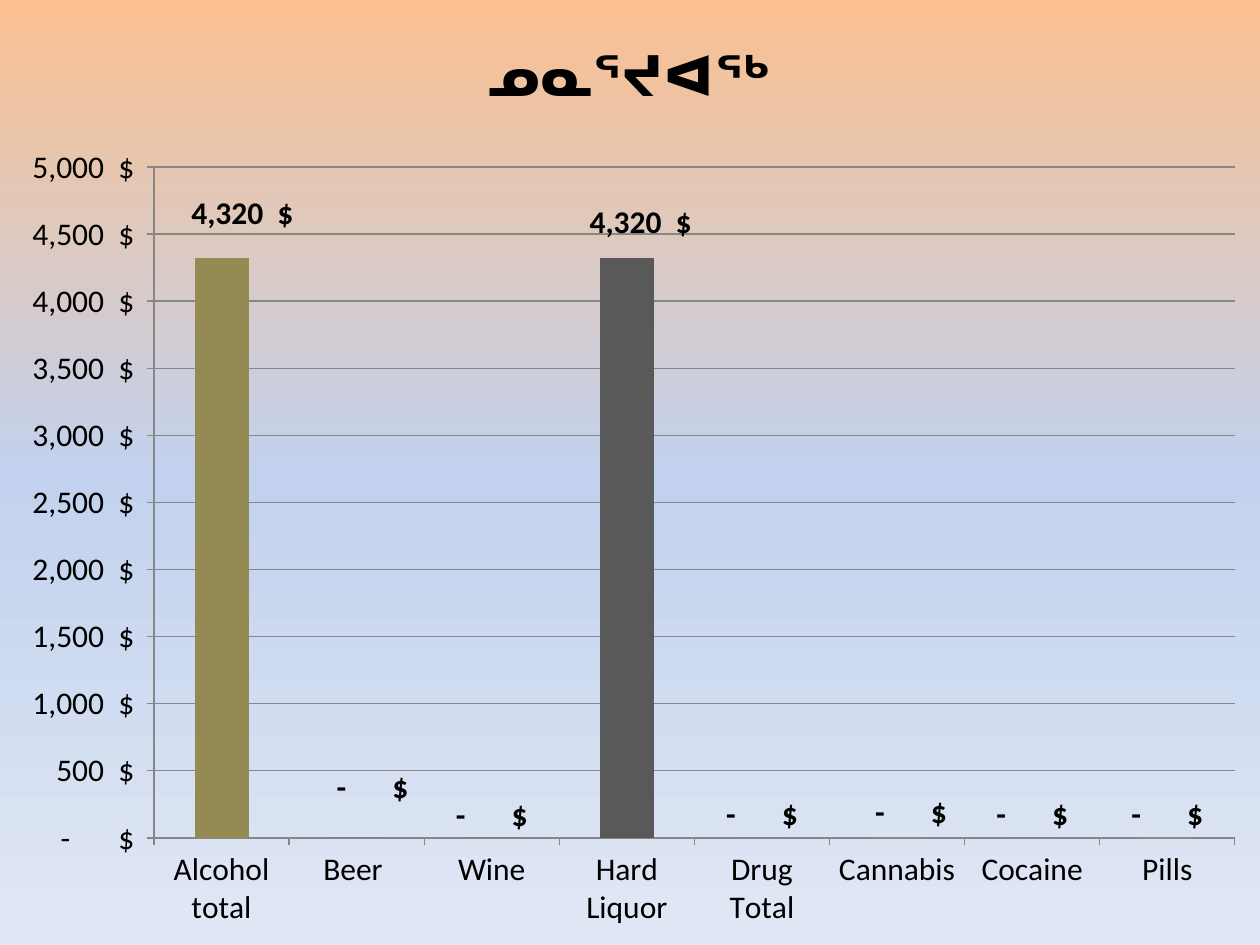
from copy import deepcopy
from typing import NamedTuple, Optional

from pptx import Presentation
from pptx.chart.data import CategoryChartData
from pptx.dml.color import RGBColor
from pptx.enum.chart import XL_CHART_TYPE, XL_LABEL_POSITION, XL_TICK_MARK
from pptx.oxml import parse_xml
from pptx.oxml.ns import nsdecls
from pptx.util import Pt

COLUMN_CLUSTERED = XL_CHART_TYPE.COLUMN_CLUSTERED
OUTSIDE_END = XL_LABEL_POSITION.OUTSIDE_END
TICK_OUTSIDE = XL_TICK_MARK.OUTSIDE

EMU_PER_INCH, PX_PER_INCH = 914400, 126
PAGE_WIDTH, PAGE_HEIGHT = 1260, 945
FONT = "Calibri"
BLACK, GRID_GREY, DEFAULT_BLUE = "000000", "878787", "4F81BD"
DOLLARS = r'_ * #,##0_)\ "$"_ ;_ * \(#,##0\)\ "$"_ ;_ * "-"??_)\ "$"_ ;_ @_ '


class GradientStop(NamedTuple):
    position: float
    color: str


class Column(NamedTuple):
    category: str
    value: int
    color: str = DEFAULT_BLUE
    label_shift: Optional[tuple[int, int]] = None


BACKGROUND = [
    GradientStop(0, "FAC090"),
    GradientStop(0.5, "C2D1ED"),
    GradientStop(1, "E1E8F5"),
]

COLUMNS = [
    Column("Alcohol total", 4320, "948A54", (21, -21)),
    Column("Beer ", 0, "604A7B", (16, -27)),
    Column("Wine", 0, "953735", (0, 1)),
    Column("Hard Liquor", 4320, "595959", (14, -12)),
    Column("Drug Total", 0),
    Column("Cannabis", 0, "9BBB59", (14, -2)),
    Column("Cocaine", 0, "8064A2"),
    Column("Pills", 0, "F79646"),
]


def px(length: int) -> int:
    return round(length * EMU_PER_INCH / PX_PER_INCH)


def rgb(color: str) -> RGBColor:
    return RGBColor.from_string(color)


def style_font(font, size: int, bold: bool = False) -> None:
    font.name = FONT
    font.size = Pt(size)
    font.bold = bold
    font.color.rgb = rgb(BLACK)


def style_line(line) -> None:
    line.color.rgb = rgb(GRID_GREY)
    line.width = Pt(0.75)


def paint_background(page, stops: list[GradientStop]) -> None:
    fill = page.background.fill
    fill.gradient()
    fill.gradient_angle = 270
    stop_list = page.element.xpath(".//a:gsLst")[0]
    while len(stop_list) < len(stops):
        stop_list.append(deepcopy(stop_list[0]))
    for target, stop in zip(fill.gradient_stops, stops):
        target.position = stop.position
        target.color.rgb = rgb(stop.color)


def manual_layout(x: int, y: int, width: int = 0, height: int = 0):
    """Layout in fractions of the page: a plot area if sized, else a label shift."""
    parts = [("x", x / PAGE_WIDTH), ("y", y / PAGE_HEIGHT)]
    modes = ""
    if width:
        parts += [("w", width / PAGE_WIDTH), ("h", height / PAGE_HEIGHT)]
        modes = ('<c:layoutTarget val="inner"/>'
                 '<c:xMode val="edge"/><c:yMode val="edge"/>')
    values = "".join(f'<c:{name} val="{value:.4f}"/>' for name, value in parts)
    return parse_xml(f'<c:layout {nsdecls("c")}><c:manualLayout>'
                     f'{modes}{values}</c:manualLayout></c:layout>')


def place_plot(chart, x: int, y: int, width: int, height: int) -> None:
    plot_area = chart.element.xpath(".//c:plotArea")[0]
    for layout in plot_area.xpath("./c:layout"):
        plot_area.remove(layout)
    plot_area.insert(0, manual_layout(x, y, width, height))


def shift_label(chart, series, index: int, shift: tuple[int, int]) -> None:
    label = series.points[index].data_label
    label.position = OUTSIDE_END
    style_font(label.font, 18, bold=True)
    index_element = chart.element.xpath(f".//c:dLbl/c:idx[@val='{index}']")[0]
    number_format = parse_xml(f'<c:numFmt {nsdecls("c")} sourceLinked="0"/>')
    number_format.set("formatCode", DOLLARS)
    index_element.addnext(number_format)
    index_element.addnext(manual_layout(*shift))


def hide_leader_lines(chart) -> None:
    labels = chart.element.xpath(".//c:ser/c:dLbls")[0]
    for flag in labels.xpath("./c:showLeaderLines"):
        labels.remove(flag)
    labels.append(parse_xml(f'<c:showLeaderLines {nsdecls("c")} val="0"/>'))
    labels.append(parse_xml(
        f'<c:extLst {nsdecls("c")}>'
        '<c:ext uri="{CE6537A1-D6FC-4f65-9D91-7224C49458BB}" '
        'xmlns:c15="http://schemas.microsoft.com/office/drawing/2012/chart">'
        '<c15:showLeaderLines val="0"/></c:ext></c:extLst>'))


def style_axes(chart) -> None:
    for axis in (chart.category_axis, chart.value_axis):
        axis.major_tick_mark = TICK_OUTSIDE
        style_font(axis.tick_labels.font, 18)
        style_line(axis.format.line)
    value_axis = chart.value_axis
    value_axis.minimum_scale, value_axis.maximum_scale = 0, 5000
    value_axis.major_unit = 500
    value_axis.has_major_gridlines = True
    style_line(value_axis.major_gridlines.format.line)
    value_axis.tick_labels.number_format = DOLLARS
    value_axis.tick_labels.number_format_is_linked = False


def style_columns(chart, columns: list[Column]) -> None:
    plot = chart.plots[0]
    plot.gap_width = 150
    plot.vary_by_categories = False
    series = plot.series[0]
    series.invert_if_negative = False
    series.format.fill.solid()
    series.format.fill.fore_color.rgb = rgb(DEFAULT_BLUE)
    labels = series.data_labels
    labels.show_value = True
    labels.position = OUTSIDE_END
    labels.number_format = DOLLARS
    labels.number_format_is_linked = False
    style_font(labels.font, 18, bold=True)
    for index, column in enumerate(columns):
        if column.color != DEFAULT_BLUE:
            fill = series.points[index].format.fill
            fill.solid()
            fill.fore_color.rgb = rgb(column.color)
        if column.label_shift:
            shift_label(chart, series, index, column.label_shift)
    hide_leader_lines(chart)


def add_spending_chart(page, title: str, columns: list[Column]) -> None:
    data = CategoryChartData(number_format=DOLLARS)
    data.categories = [column.category for column in columns]
    data.add_series("Series 1", [column.value for column in columns])
    chart = page.shapes.add_chart(
        COLUMN_CLUSTERED, 0, 0, px(PAGE_WIDTH), px(PAGE_HEIGHT), data).chart
    style_font(chart.font, 18)
    chart.has_legend = False
    chart.has_title = True
    chart.chart_title.include_in_layout = False
    para = chart.chart_title.text_frame.paragraphs[0]
    para.text = title
    style_font(para.runs[0].font, 32, bold=True)
    style_axes(chart)
    style_columns(chart, columns)
    place_plot(chart, 154, 167, 1081, 671)


def main() -> None:
    deck = Presentation()
    deck.slide_width, deck.slide_height = px(PAGE_WIDTH), px(PAGE_HEIGHT)
    page = deck.slides.add_slide(deck.slide_layouts[6])
    paint_background(page, BACKGROUND)
    add_spending_chart(page, "ᓄᓇᕐᔪᐊᖅ", COLUMNS)
    deck.save("out.pptx")


if __name__ == "__main__":
    main()
